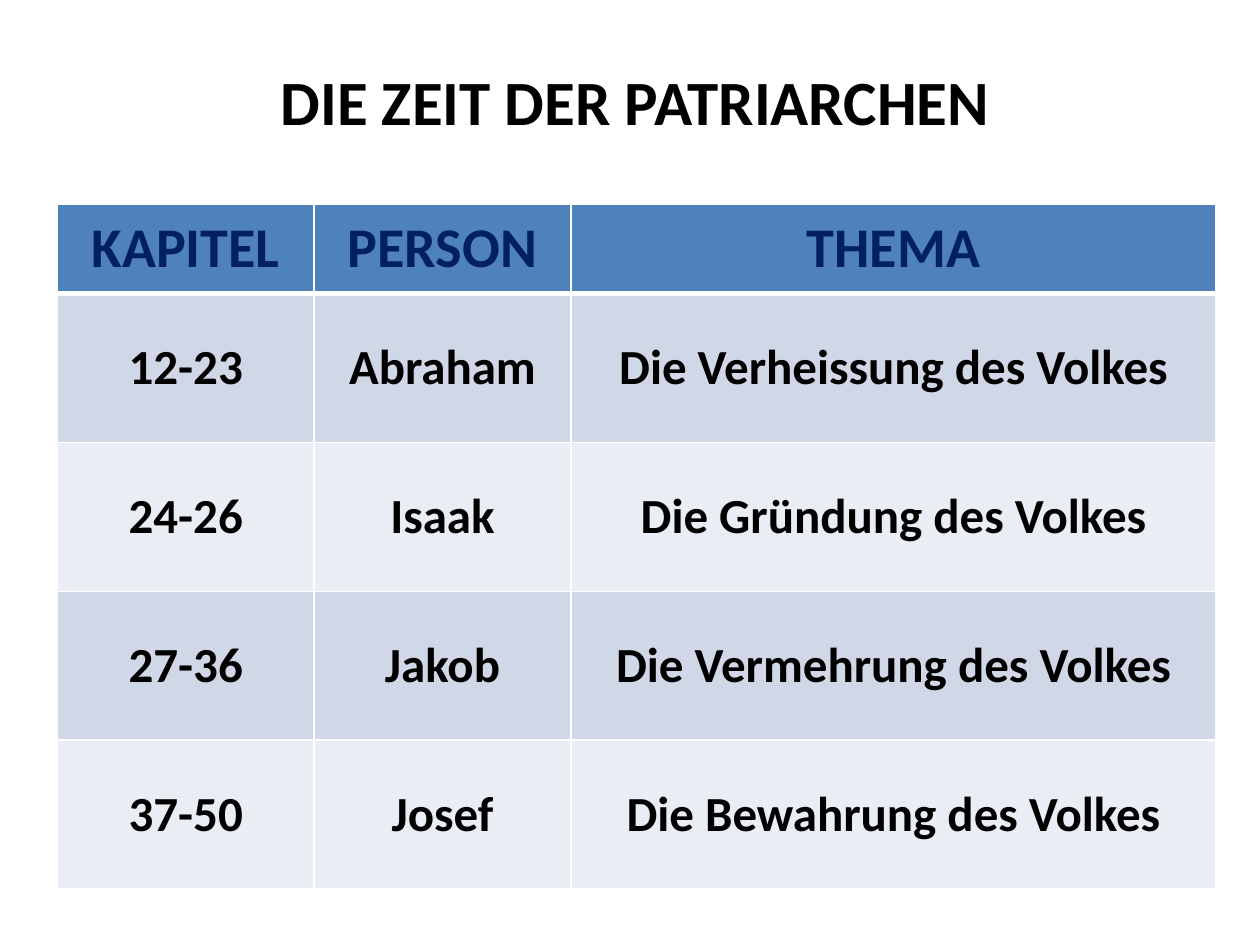
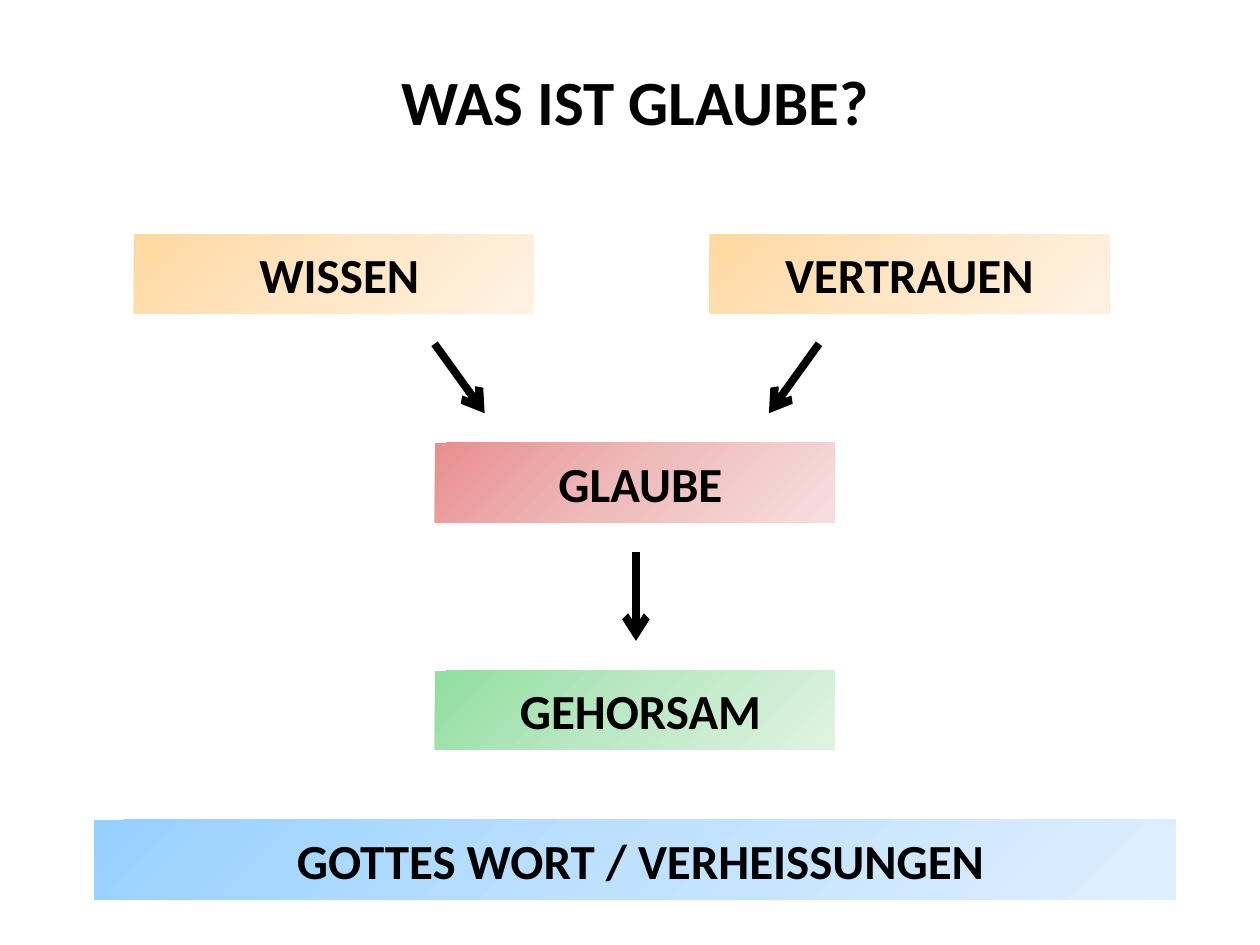
"""Build two slides on the patriarchs and on the meaning of faith."""
from copy import deepcopy

from lxml.etree import SubElement
from pptx import Presentation
from pptx.dml.color import RGBColor
from pptx.enum.shapes import MSO_CONNECTOR, MSO_SHAPE
from pptx.enum.text import MSO_ANCHOR, MSO_AUTO_SIZE, PP_ALIGN
from pptx.oxml.ns import qn
from pptx.util import Cm, Pt

FONT = "Calibri"
BLACK = RGBColor(0x00, 0x00, 0x00)
WHITE = RGBColor(0xFF, 0xFF, 0xFF)
NAVY = RGBColor(0x00, 0x20, 0x60)
HEADER_BLUE = RGBColor(0x4F, 0x81, 0xBD)
BAND_DARK = RGBColor(0xD0, 0xD8, 0xE8)
BAND_LIGHT = RGBColor(0xE9, 0xED, 0xF4)
ORANGE = (RGBColor(0xFF, 0xD8, 0xA0), RGBColor(0xFF, 0xE6, 0xC5), RGBColor(0xFF, 0xF2, 0xE3))
RED = (RGBColor(0xE9, 0x8F, 0x8F), RGBColor(0xEF, 0xBC, 0xBC), RGBColor(0xF7, 0xDE, 0xDE))
GREEN = (RGBColor(0x91, 0xDE, 0xA0), RGBColor(0xBD, 0xE8, 0xC5), RGBColor(0xDF, 0xF3, 0xE3))
BLUE = (RGBColor(0x96, 0xD0, 0xFF), RGBColor(0xBF, 0xE1, 0xFF), RGBColor(0xE0, 0xEF, 0xFF))

TITLE_SIZE, HEADER_SIZE, TEXT_SIZE = 36, 32, 28
TITLE_OPACITY = 60
BOX_WIDTH, BOX_HEIGHT = 8.06, 1.6
TEXT_SHIFT = 0.22

COLUMN_WIDTHS = (5.17, 5.18, 13)
HEADER_HEIGHT, ROW_HEIGHT = 1.81, 3
PATRIARCHS = (
    ("KAPITEL", "PERSON", "THEMA"),
    ("12-23", "Abraham", "Die Verheissung des Volkes"),
    ("24-26", "Isaak", "Die Gründung des Volkes"),
    ("27-36", "Jakob", "Die Vermehrung des Volkes"),
    ("37-50", "Josef", "Die Bewahrung des Volkes"),
)


def write(frame, text, size, color=BLACK):
    """Put one bold, centred run into a text frame."""
    para = frame.paragraphs[0]
    para.alignment = PP_ALIGN.CENTER
    span = para.add_run()
    span.text = text
    span.font.name = FONT
    span.font.size = Pt(size)
    span.font.bold = True
    span.font.color.rgb = color


def fill_translucent(box, color, opacity):
    """Fill a shape with a colour at the given opacity in percent."""
    box.fill.solid()
    box.fill.fore_color.rgb = color
    color_element = next(box._element.spPr.iter(qn("a:srgbClr")))
    SubElement(color_element, qn("a:alpha"), val=str(opacity * 1000))


def add_page(deck, title):
    """Add a page with the shared title style."""
    page = deck.slides.add_slide(deck.slide_layouts[5])
    box = page.shapes.title
    box.left, box.top, box.width, box.height = Cm(1.11), Cm(1.13), Cm(23.39), Cm(1.6)
    fill_translucent(box, WHITE, TITLE_OPACITY)
    box.text_frame.auto_size = MSO_AUTO_SIZE.NONE
    box.text_frame.vertical_anchor = MSO_ANCHOR.TOP
    write(box.text_frame, title, TITLE_SIZE)
    return page


def add_border(cell, side, points):
    """Draw a white border on one side of a cell."""
    properties = cell._tc.get_or_add_tcPr()
    line = SubElement(properties, qn(f"a:ln{side}"), w=str(Pt(points)))
    SubElement(SubElement(line, qn("a:solidFill")), qn("a:srgbClr"), val=str(WHITE))


def style_cell(cell, text, row):
    """Fill a cell according to its row."""
    is_header = row == 0
    widths = {"L": 1, "R": 1, "T": 3 if row == 1 else 1, "B": 3 if is_header else 1}
    for side, points in widths.items():
        add_border(cell, side, points)
    cell.fill.solid()
    band = BAND_DARK if row % 2 else BAND_LIGHT
    cell.fill.fore_color.rgb = HEADER_BLUE if is_header else band
    cell.vertical_anchor = MSO_ANCHOR.MIDDLE
    size, color = (HEADER_SIZE, NAVY) if is_header else (TEXT_SIZE, BLACK)
    write(cell.text_frame, text, size, color)


def add_patriarch_table(page):
    """Add the table of chapters, persons and themes."""
    heights = [HEADER_HEIGHT] + [ROW_HEIGHT] * (len(PATRIARCHS) - 1)
    table = page.shapes.add_table(
        len(heights), len(COLUMN_WIDTHS), Cm(1.16), Cm(4.11),
        Cm(sum(COLUMN_WIDTHS)), Cm(sum(heights))).table
    for column, width in zip(table.columns, COLUMN_WIDTHS):
        column.width = Cm(width)
    for row, (texts, height) in enumerate(zip(PATRIARCHS, heights)):
        table.rows[row].height = Cm(height)
        for column, text in enumerate(texts):
            style_cell(table.cell(row, column), text, row)


def fill_gradient(box, colors):
    """Fill a shape with a diagonal gradient of three evenly spaced colours."""
    box.fill.gradient()
    box.fill.gradient_angle = 315
    stop_list = next(box._element.spPr.iter(qn("a:gsLst")))
    stop_list.append(deepcopy(stop_list[-1]))
    for index, (stop, color) in enumerate(zip(box.fill.gradient_stops, colors)):
        stop.position = index / 2
        stop.color.rgb = color


def add_box(page, text, left, top, colors, width=BOX_WIDTH, shift=TEXT_SHIFT):
    """Add a labelled gradient box."""
    box = page.shapes.add_shape(
        MSO_SHAPE.RECTANGLE, Cm(left), Cm(top), Cm(width), Cm(BOX_HEIGHT))
    box.shadow.inherit = False
    box.line.fill.background()
    fill_gradient(box, colors)
    frame = box.text_frame
    frame.word_wrap = True
    frame.vertical_anchor = MSO_ANCHOR.MIDDLE
    frame.margin_left, frame.margin_right = Cm(0.1 + shift), Cm(0.1)
    frame.margin_top = frame.margin_bottom = Cm(0.2)
    write(frame, text, TEXT_SIZE)


def add_arrow(page, start, end):
    """Add a thick black arrow between two points."""
    arrow = page.shapes.add_connector(
        MSO_CONNECTOR.STRAIGHT, *(Cm(value) for value in start + end))
    arrow.line.color.rgb = BLACK
    arrow.line.width = Pt(4.5)
    SubElement(arrow.line._get_or_add_ln(), qn("a:tailEnd"), type="arrow")
    SubElement(arrow._element.spPr, qn("a:effectLst"))


def add_faith_diagram(page):
    """Show how knowledge and trust lead to faith and obedience."""
    add_box(page, "GLAUBE", 8.77, 8.93, RED)
    add_box(page, "WISSEN", 2.7, 4.72, ORANGE)
    add_box(page, "VERTRAUEN", 14.3, 4.72, ORANGE, shift=0)
    add_box(page, "GEHORSAM", 8.77, 13.52, GREEN)
    add_arrow(page, (8.76, 6.93), (9.77, 8.33))
    add_arrow(page, (16.51, 6.93), (15.5, 8.33))
    add_arrow(page, (12.82, 11.13), (12.82, 12.92))
    add_box(page, "GOTTES WORT / VERHEISSUNGEN", 1.9, 16.53, BLUE, width=21.8)


def main():
    """Build and save the deck."""
    deck = Presentation()
    deck.slide_width, deck.slide_height = Cm(25.4), Cm(19.05)
    add_patriarch_table(add_page(deck, "DIE ZEIT DER PATRIARCHEN"))
    add_faith_diagram(add_page(deck, "WAS IST GLAUBE?"))
    deck.save("out.pptx")


if __name__ == "__main__":
    main()
